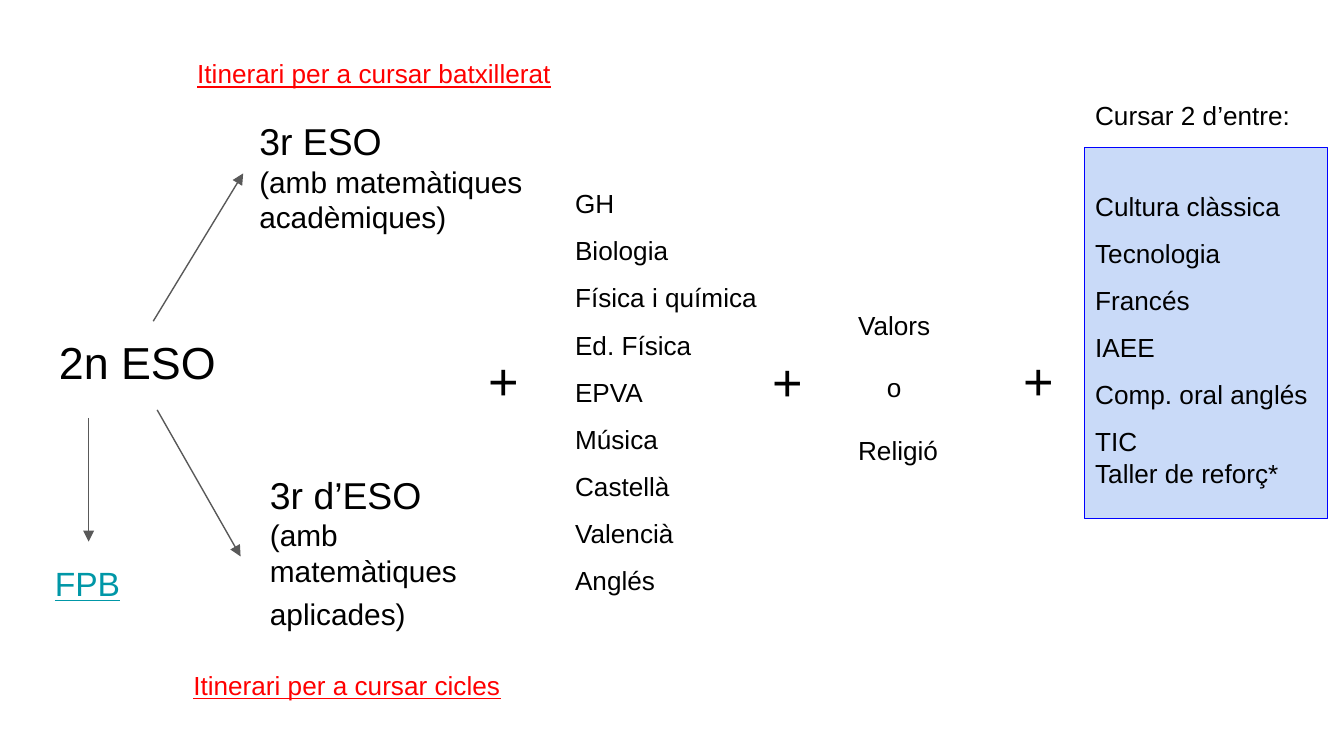
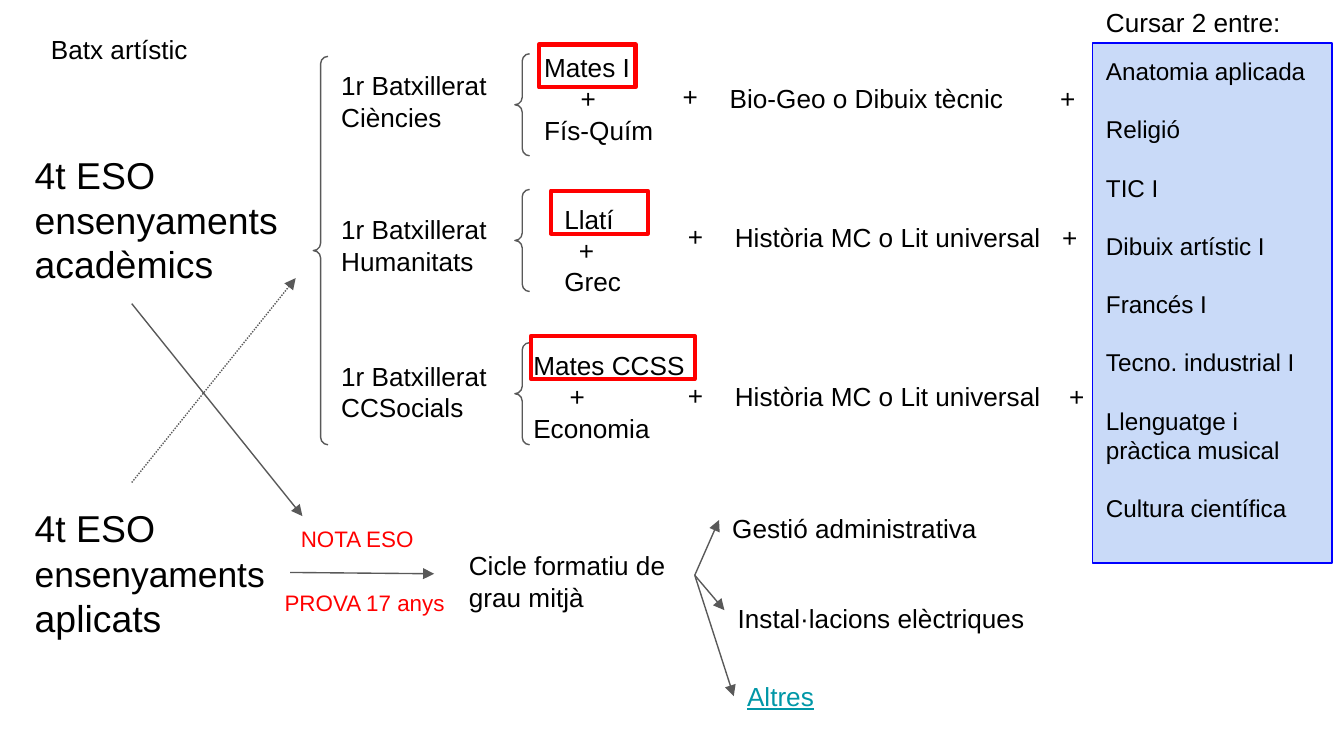
"""Build two slides of school study routes."""
import dataclasses

import lxml.etree
import pptx
import pptx.dml.color
import pptx.enum.dml
import pptx.enum.shapes
import pptx.enum.text
import pptx.oxml.ns
import pptx.util

Pt = pptx.util.Pt
KIND = pptx.enum.shapes.MSO_SHAPE


@dataclasses.dataclass(frozen=True)
class Theme:
    font: str = "Arial"
    ink: str = "000000"
    red: str = "FF0000"
    teal: str = "0097A7"
    gray: str = "595959"
    blue: str = "0000FF"
    pale: str = "C9DAF8"
    paper: str = "FFFFFF"
    huge: int = 28
    main: int = 24
    head: int = 20
    trim: int = 19
    mid: int = 18
    sub: int = 16
    body: int = 14
    list: int = 13
    note: int = 12
    thin: float = 0.75
    thick: float = 2.25
    inset: float = 7.2


T = Theme()


@dataclasses.dataclass
class Para:
    runs: list
    ratio: float = None
    left: float = 0
    gap: float = 0
    mark: str = ""


def rgb(code):
    return pptx.dml.color.RGBColor.from_string(code)


def line(text, size=T.body, **rest):
    return Para([(text, size)], **rest)


def add_xml(node, tag, **keys):
    return lxml.etree.SubElement(node, pptx.oxml.ns.qn(tag), **keys)


def indent(par, item):
    props = par._p.get_or_add_pPr()
    props.set("marL", str(Pt(item.left)))
    props.set("indent", "0")
    if item.mark:
        props.set("indent", str(Pt(-25.2)))
        add_xml(add_xml(props, "a:buClr"), "a:srgbClr", val=T.ink)
        add_xml(props, "a:buFont", typeface=T.font)
        add_xml(props, "a:buChar", char=item.mark)


def write(frame, items, color=T.ink, under=False):
    frame.word_wrap = True
    frame.vertical_anchor = pptx.enum.text.MSO_ANCHOR.TOP
    frame.margin_left = frame.margin_right = Pt(T.inset)
    frame.margin_top = frame.margin_bottom = Pt(T.inset)
    for pos, item in enumerate(items):
        par = frame.add_paragraph() if pos else frame.paragraphs[0]
        par.alignment = pptx.enum.text.PP_ALIGN.LEFT
        if item.ratio:
            par.line_spacing = item.ratio
        if item.gap:
            par.space_before = Pt(item.gap)
        if item.left:
            indent(par, item)
        for text, size in item.runs:
            run = par.add_run()
            run.text = text
            run.font.name = T.font
            run.font.size = Pt(size)
            run.font.color.rgb = rgb(color)
            if under:
                run.font.underline = True


def label(slide, area, *items, **style):
    box = slide.shapes.add_textbox(*map(Pt, area))
    write(box.text_frame, items, **style)


def shape(slide, kind, area, color, width=T.thin, fill=None):
    form = slide.shapes.add_shape(kind, *map(Pt, area))
    form.shadow.inherit = False
    if fill:
        form.fill.solid()
        form.fill.fore_color.rgb = rgb(fill)
    else:
        form.fill.background()
    form.line.color.rgb = rgb(color)
    form.line.width = Pt(width)
    return form


def brace(slide, area):
    form = shape(slide, KIND.LEFT_BRACE, area, T.gray)
    form.adjustments[0] = 0.5
    form.adjustments[1] = 0.5


def arrow(slide, start, end, dotted=False):
    link = slide.shapes.add_connector(
        pptx.enum.shapes.MSO_CONNECTOR.STRAIGHT, *map(Pt, start + end))
    link.line.color.rgb = rgb(T.gray)
    link.line.width = Pt(T.thin)
    if dotted:
        link.line.dash_style = pptx.enum.dml.MSO_LINE.ROUND_DOT
    add_xml(link.line._get_or_add_ln(), "a:tailEnd", type="triangle")
    add_xml(link._element.spPr, "a:effectLst")


def plus(slide, left, top, size=T.huge):
    label(slide, (left, top, 33, 30), line("+", size))


def page(deck):
    slide = deck.slides.add_slide(deck.slide_layouts[6])
    slide.background.fill.solid()
    slide.background.fill.fore_color.rgb = rgb(T.paper)
    return slide


def third_year(deck):
    slide = page(deck)
    shape(slide, KIND.RECTANGLE, (581, 79.2, 130.3, 198.7), T.blue, fill=T.pale)
    label(slide, (24.5, 172.1, 114.5, 23), line("2n ESO", T.main))
    label(slide, (131.8, 56.2, 173.5, 23), line("3r ESO", T.head),
          line("(amb matemàtiques acadèmiques)", T.sub))
    label(slide, (137.5, 245.5, 145.4, 65.5), line("3r d’ESO", T.head),
          Para([("(amb matemàtiques aplicades)", T.sub), (" ", T.head)]))
    core = ("GH", "Biologia", "Física i química", "Ed. Física", "EPVA",
            "Música", "Castellà", "Valencià", "Anglés")
    label(slide, (301, 85, 153.4, 101.5), *[line(name, ratio=1.5) for name in core])
    label(slide, (437, 158.4, 98, 84.2), line("Valors", left=15.6),
          line("o", left=31.1, gap=16.8), line("Religió", left=15.6, gap=16.8))
    for left, top in ((254.9, 179.3), (406.8, 180), (541.4, 179.3)):
        plus(slide, left, top)
    picks = ("Cultura clàssica", "Tecnologia", "Francés", "IAEE",
             "Comp. oral anglés", "TIC")
    label(slide, (579.6, 86.4, 131, 210.2),
          *[line(name, ratio=1.5) for name in picks], line("Taller de reforç*"))
    label(slide, (579.6, 46.1, 122.4, 16.6), line("Cursar 2 d’entre:"))
    for start, end in (((82.1, 172.1), (130.3, 92.9)),
                       ((84.2, 219.6), (128.9, 298.1)),
                       ((47.5, 223.9), (47.5, 290.2))):
        arrow(slide, start, end)
    label(slide, (98.6, 23.8, 235.4, 31.7),
          line("Itinerari per a cursar batxillerat"), color=T.red, under=True)
    label(slide, (96.5, 351.4, 184.3, 31.7),
          line("Itinerari per a cursar cicles"), color=T.red, under=True)
    label(slide, (22.3, 294.5, 65.5, 36), line("FPB", T.mid),
          color=T.teal, under=True)


def tracks(slide):
    names = ("Ciències", "Humanitats", "CCSocials")
    for name, top, fork in zip(names, (30.2, 107.3, 185.8), (28.8, 101.5, 183.6)):
        label(slide, (175.7, top, 114.5, 46.8), line("1r Batxillerat " + name))
        brace(slide, (275.8, fork, 7.9, 54.7))
    brace(slide, (167.8, 30.2, 7.9, 208.1))
    pairs = (("Mates I", "Fís-Quím", 19.5, (284.4, 20.2, 77.8, 18)),
             ("Llatí", "Grec", 7.8, (295.2, 101.5, 51.8, 26)),
             ("Mates CCSS", "Economia", 19.5, (278.6, 180, 97.2, 23)))
    for first, last, left, area in pairs:
        label(slide, area, line(first), line("+", left=left), line(last))
    arts = "Història MC o Lit universal"
    for text, left, top, end in (("Bio-Geo o Dibuix tècnic", 347.8, 36.7, 560.8),
                                 (arts, 350.6, 111.6, 561.9),
                                 (arts, 350.6, 196.6, 565.7)):
        label(slide, (left, top, 215, 26), line(text, left=36, mark="+"))
        plus(slide, end, top, T.body)
    for area in ((288.7, 23.8, 51.8, 23), (295.2, 102.2, 51.8, 23),
                 (284.4, 180, 87.8, 23)):
        shape(slide, KIND.RECTANGLE, area, T.red, T.thick)


def trades(slide):
    label(slide, (244.1, 287.3, 128.2, 41.8), line("Cicle formatiu de grau mitjà"))
    label(slide, (385.2, 267.1, 153.4, 23), line("Gestió administrativa"))
    label(slide, (388.1, 315.4, 181.4, 23), line("Instal·lacions elèctriques"))
    label(slide, (393.1, 357.1, 97.2, 31.7), line("Altres"),
          color=T.teal, under=True)
    for end in ((385.2, 278.6), (388.1, 326.9), (393.1, 373)):
        arrow(slide, (372.2, 308.2), end)
    arrow(slide, (155.5, 306.7), (232.6, 307.4))
    label(slide, (154.1, 274.3, 82.1, 28.8), line("NOTA ESO", T.note), color=T.red)
    label(slide, (145.4, 308.2, 110.2, 28.8), line("PROVA 17 anys", T.note),
          color=T.red)


def fourth_year(deck):
    slide = page(deck)
    label(slide, (11.5, 74.2, 173.5, 23),
          line("4t ESO ensenyaments acadèmics", T.head))
    label(slide, (11.5, 263.5, 145.4, 65.5),
          Para([("4t ESO ", T.head), ("ensenyaments", T.trim),
                (" aplicats", T.head)]))
    label(slide, (20.2, 10.8, 91.4, 31.7), line("Batx artístic"))
    tracks(slide)
    trades(slide)
    arrow(slide, (70.6, 258.5), (158.4, 149), dotted=True)
    arrow(slide, (70.6, 162.7), (162, 276.5))
    picks = ("Anatomia aplicada", "Religió", "TIC I", "Dibuix artístic I",
             "Francés I", "Tecno. industrial I", "Llenguatge i pràctica musical",
             "Cultura científica")
    panel = shape(slide, KIND.RECTANGLE, (585.4, 23, 128.2, 278.6), T.blue,
                  fill=T.pale)
    write(panel.text_frame, [line(name, T.list, gap=15.6 if pos else 0)
                             for pos, name in enumerate(picks)])
    label(slide, (585.4, -3.6, 121, 14.4), line("Cursar 2 entre:"))


def main():
    deck = pptx.Presentation()
    deck.slide_width, deck.slide_height = Pt(720), Pt(405)
    third_year(deck)
    fourth_year(deck)
    deck.save("out.pptx")


main()
